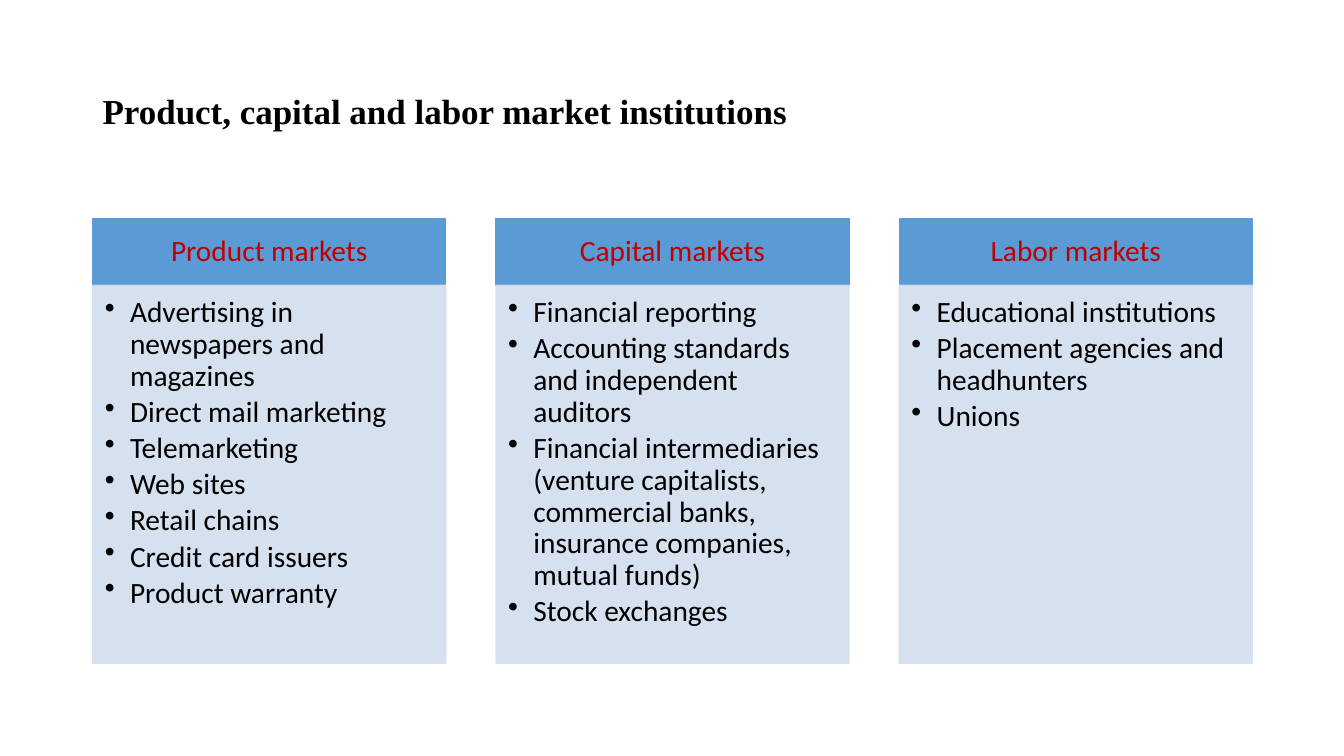
from dataclasses import dataclass

from lxml import etree
from pptx import Presentation, util as u
from pptx.dml import color
from pptx.enum import shapes, text
from pptx.oxml import ns

LEFT, TITLE_WIDTH = 0.92, 11.5
COLUMN_WIDTH = 3.5
COLUMN_PITCH = (TITLE_WIDTH - COLUMN_WIDTH) / 2
HEADER_TOP, HEADER_HEIGHT = 2.17, 0.66
LIST_TOP, LIST_HEIGHT = HEADER_TOP + HEADER_HEIGHT, 3.75
BULLET_INDENT = 0.25


@dataclass(frozen=True)
class Market:
    name: str
    institutions: list[str]


MARKETS = [
    Market("Product markets", [
        "Advertising in newspapers and magazines",
        "Direct mail marketing",
        "Telemarketing",
        "Web sites",
        "Retail chains",
        "Credit card issuers",
        "Product warranty",
    ]),
    Market("Capital markets", [
        "Financial reporting",
        "Accounting standards and independent auditors",
        "Financial intermediaries (venture capitalists, commercial banks, "
        "insurance companies, mutual funds)",
        "Stock exchanges",
    ]),
    Market("Labor markets", [
        "Educational institutions",
        "Placement agencies and headhunters",
        "Unions",
    ]),
]


def rgb(value: str) -> color.RGBColor:
    return color.RGBColor.from_string(value)


def add_bullet(paragraph) -> None:
    properties = paragraph._p.get_or_add_pPr()
    properties.set("marL", str(u.Inches(BULLET_INDENT)))
    properties.set("indent", str(-u.Inches(BULLET_INDENT)))
    etree.SubElement(properties, ns.qn("a:buChar")).set("char", "•")


def write(shape, lines: list[str], *, size: float = 21, font: str = "Calibri",
          ink: str = "000000", bold: bool = False, bullets: bool = False,
          align=text.PP_ALIGN.LEFT, anchor=text.MSO_ANCHOR.MIDDLE,
          insets: tuple[float, float, float, float] = (0.1, 0.05, 0.1, 0.05),
          space_after: float = 0) -> None:
    """Fill the shape with one paragraph per line; insets run left, top, right, bottom."""
    frame = shape.text_frame
    frame.word_wrap = True
    frame.vertical_anchor = anchor
    (frame.margin_left, frame.margin_top,
     frame.margin_right, frame.margin_bottom) = map(u.Inches, insets)
    for index, line in enumerate(lines):
        paragraph = frame.add_paragraph() if index else frame.paragraphs[0]
        paragraph.alignment = align
        paragraph.line_spacing = 0.9
        paragraph.space_after = u.Pt(space_after)
        if bullets:
            add_bullet(paragraph)
        run = paragraph.add_run()
        run.text = line
        run.font.size = u.Pt(size)
        run.font.name = font
        run.font.bold = bold
        run.font.color.rgb = rgb(ink)


def add_panel(slide, left: float, top: float, height: float, fill: str,
              opacity: int = 100):
    """Add a column-wide rectangle; opacity is in percent."""
    panel = slide.shapes.add_shape(
        shapes.MSO_SHAPE.RECTANGLE, u.Inches(left), u.Inches(top),
        u.Inches(COLUMN_WIDTH), u.Inches(height))
    panel.shadow.inherit = False
    panel.fill.solid()
    panel.fill.fore_color.rgb = rgb(fill)
    panel.line.color.rgb = rgb(fill)
    panel.line.width = u.Pt(1)
    if opacity < 100:
        for tint in panel._element.spPr.iter(ns.qn("a:srgbClr")):
            etree.SubElement(tint, ns.qn("a:alpha")).set("val", str(opacity * 1000))
    return panel


def add_market(slide, market: Market, left: float) -> None:
    header = add_panel(slide, left, HEADER_TOP, HEADER_HEIGHT, "5B9BD5")
    write(header, [market.name], ink="C00000", align=text.PP_ALIGN.CENTER,
          insets=(0.16, 0.09, 0.16, 0.09))
    institutions = add_panel(slide, left, LIST_TOP, LIST_HEIGHT, "D2DEEF", opacity=90)
    write(institutions, market.institutions, bullets=True, anchor=text.MSO_ANCHOR.TOP,
          insets=(0.12, 0.12, 0.16, 0.18), space_after=3.15)


def main() -> None:
    deck = Presentation()
    deck.slide_width, deck.slide_height = u.Inches(13.33), u.Inches(7.5)
    slide = deck.slides.add_slide(deck.slide_layouts[6])

    title = slide.shapes.add_textbox(
        u.Inches(LEFT), u.Inches(0.4), u.Inches(TITLE_WIDTH), u.Inches(1.45))
    write(title, ["Product, capital and labor market institutions"], size=25,
          font="Times New Roman", bold=True, align=text.PP_ALIGN.JUSTIFY)

    for column, market in enumerate(MARKETS):
        add_market(slide, market, LEFT + column * COLUMN_PITCH)

    deck.save("out.pptx")


if __name__ == "__main__":
    main()
